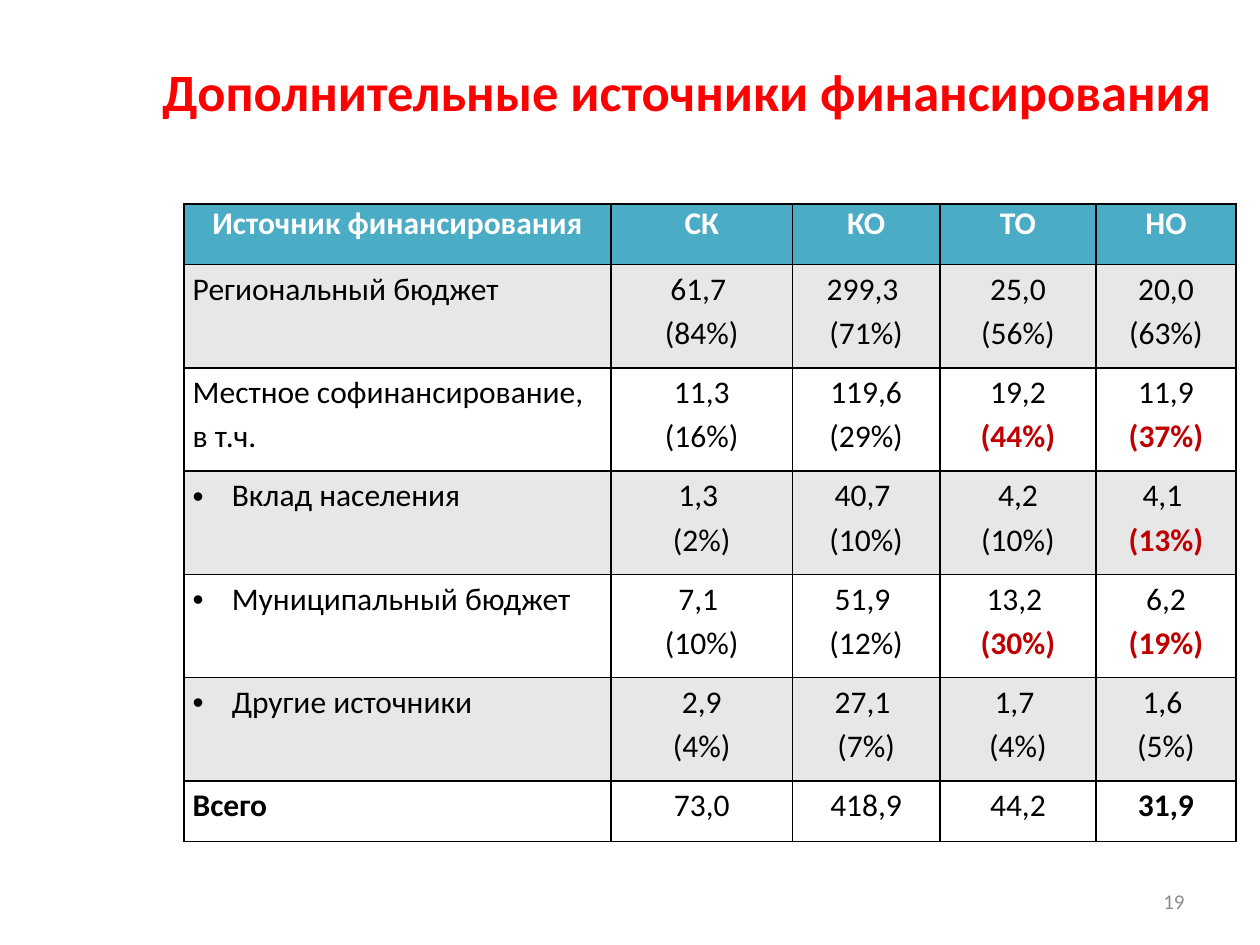
"""Builds a slide with a table of additional funding sources."""
from lxml import etree
from pptx import Presentation
from pptx.dml.color import RGBColor
from pptx.enum.text import MSO_ANCHOR, PP_ALIGN
from pptx.oxml.ns import qn
from pptx.util import Inches, Pt

LEFT, CENTER, RIGHT = PP_ALIGN.LEFT, PP_ALIGN.CENTER, PP_ALIGN.RIGHT
MIDDLE = MSO_ANCHOR.MIDDLE
BULLET = "• "

COL_WIDTHS = [3.39, 1.44, 1.17, 1.24, 1.11]
ROW_HEIGHTS = [0.48] + [0.82] * 5 + [0.48]
ROWS = [
    ["Источник финансирования", "СК", "КО", "ТО", "НО"],
    ["Региональный бюджет", "61,7 \n(84%)", "299,3 \n(71%)", "25,0\n(56%)", "20,0\n(63%)"],
    ["Местное софинансирование,\nв т.ч.", "11,3\n(16%)", "119,6\n(29%)", "19,2\n(44%)", "11,9\n(37%)"],
    [BULLET + "Вклад населения", "1,3 \n(2%)", "40,7 \n(10%)", "4,2\n(10%)", "4,1 \n(13%)"],
    [BULLET + "Муниципальный бюджет", "7,1 \n(10%)", "51,9 \n(12%)", "13,2 \n(30%)", "6,2\n(19%)"],
    [BULLET + "Другие источники", "2,9\n(4%)", "27,1 \n(7%)", "1,7 \n(4%)", "1,6 \n(5%)"],
    ["Всего", "73,0", "418,9", "44,2", "31,9"],
]
TOTALS = {"Всего", "31,9"}
HIGHLIGHTS = {"(44%)", "(37%)", "(13%)", "(30%)", "(19%)"}


def rgb(value):
    return RGBColor.from_string(value)


class Deck:
    font = "Calibri"
    header = {"size": Pt(18), "bold": True, "color": "FFFFFF"}
    body = {"size": Pt(18), "bold": False, "color": "000000"}
    total = {**body, "bold": True}
    highlight = {**total, "color": "C00000"}
    header_fill, bands, border = "4BACC6", ("FFFFFF", "E7E7E7"), "000000"

    def __init__(self, prs):
        self.s = prs.slides.add_slide(prs.slide_layouts[6])

    def run(self, p, text, style):
        r = p.add_run()
        r.text = text
        r.font.name = self.font
        for key, value in style.items():
            if key == "color":
                r.font.color.rgb = rgb(value)
            else:
                setattr(r.font, key, value)

    def text(self, text, box, align, style):
        tf = self.s.shapes.add_textbox(*map(Inches, box)).text_frame
        tf.word_wrap = True
        tf.vertical_anchor = MIDDLE
        p = tf.paragraphs[0]
        p.alignment = align
        self.run(p, text, style)

    def bullet(self, p):
        pPr = p._p.get_or_add_pPr()
        pPr.set("marL", str(Inches(0.31)))
        pPr.set("indent", str(Inches(-0.31)))
        etree.SubElement(pPr, qn("a:buFont"), typeface="Arial")
        etree.SubElement(pPr, qn("a:buChar"), char=BULLET.strip())

    def borders(self, cell):
        tcPr = cell._tc.get_or_add_tcPr()
        for side in "LRTB":
            ln = etree.SubElement(tcPr, qn(f"a:ln{side}"), w=str(Pt(1)))
            fill = etree.SubElement(ln, qn("a:solidFill"))
            etree.SubElement(fill, qn("a:srgbClr"), val=self.border)

    def cell_style(self, row, line):
        if row == 0:
            return self.header
        if line in HIGHLIGHTS:
            return self.highlight
        return self.total if line in TOTALS else self.body

    def cell(self, cell, row, col, text):
        self.borders(cell)
        cell.fill.solid()
        cell.fill.fore_color.rgb = rgb(self.bands[row % 2] if row else self.header_fill)
        cell.margin_left = cell.margin_right = Inches(0.07)
        cell.margin_top = cell.margin_bottom = 0
        p = cell.text_frame.paragraphs[0]
        p.alignment = CENTER if col or row == 0 else LEFT
        if row:
            p.line_spacing = 1.15
        if text.startswith(BULLET):
            self.bullet(p)
        for i, line in enumerate(text.removeprefix(BULLET).split("\n")):
            if i:
                p.add_line_break()
            self.run(p, line, self.cell_style(row, line))

    def table(self, rows, left, top, widths, heights):
        box = map(Inches, (left, top, sum(widths), sum(heights)))
        table = self.s.shapes.add_table(len(rows), len(widths), *box).table
        table.horz_banding = False
        for column, width in zip(table.columns, widths):
            column.width = Inches(width)
        for row, height in zip(table.rows, heights):
            row.height = Inches(height)
        for i, values in enumerate(rows):
            for j, value in enumerate(values):
                self.cell(table.cell(i, j), i, j, value)


def main():
    prs = Presentation()
    prs.slide_width, prs.slide_height = Inches(10), Inches(7.5)
    deck = Deck(prs)
    deck.table(ROWS, 1.46, 1.62, COL_WIDTHS, ROW_HEIGHTS)
    deck.text("19", (7.17, 6.95, 2.33, 0.4), RIGHT, {"size": Pt(12), "color": "8C8C8C"})
    deck.text("Дополнительные источники финансирования", (0.91, 0.29, 9.09, 0.85), CENTER,
              {"size": Pt(30), "bold": True, "color": "FF0000"})
    prs.save("out.pptx")


if __name__ == "__main__":
    main()
